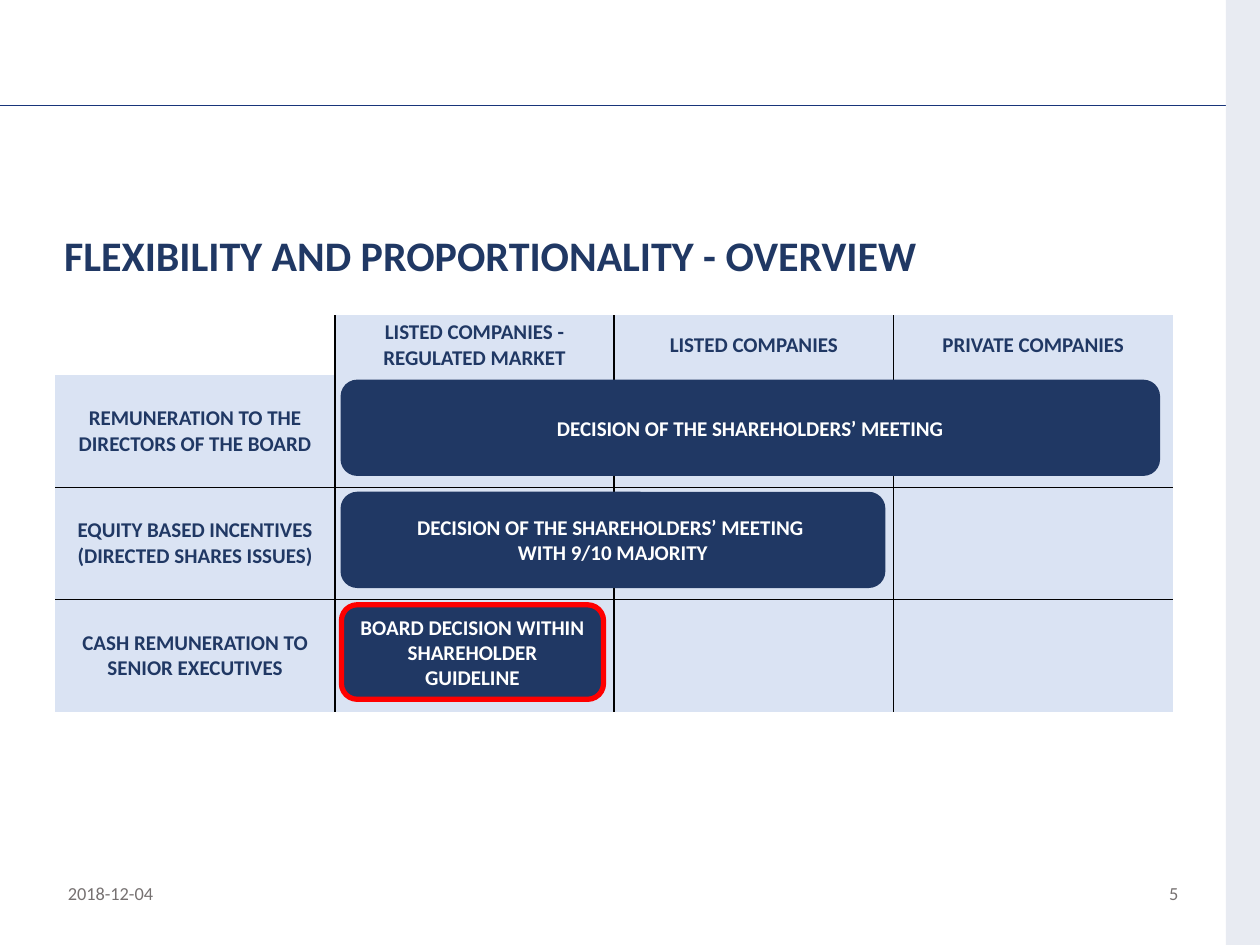
from lxml import etree
from pptx import Presentation
from pptx.dml.color import RGBColor
from pptx.enum.shapes import MSO_CONNECTOR, MSO_SHAPE
from pptx.enum.text import MSO_ANCHOR, PP_ALIGN
from pptx.oxml.ns import qn
from pptx.util import Inches, Pt

COLORS = {
    "navy": "203864",
    "rule": "18357A",
    "band": "E8EBF2",
    "cell": "DAE3F3",
    "white": "FFFFFF",
    "black": "000000",
    "red": "FF0000",
    "gray": "767171",
}
HEADERS = ["", "LISTED COMPANIES - REGULATED MARKET", "LISTED COMPANIES", "PRIVATE COMPANIES"]
TOPICS = [
    "REMUNERATION TO THE DIRECTORS OF THE BOARD",
    "EQUITY BASED INCENTIVES (DIRECTED SHARES ISSUES)",
    "CASH REMUNERATION TO SENIOR EXECUTIVES",
]
# Text, width and outline of the decision in each topic row
DECISIONS = [
    ("DECISION OF THE SHAREHOLDERS’ MEETING", 6.49, "navy", 1),
    ("DECISION OF THE SHAREHOLDERS’ MEETING \vWITH 9/10 MAJORITY", 4.31, "navy", 1),
    ("BOARD DECISION WITHIN SHAREHOLDER GUIDELINE", 2.08, "red", 3),
]
LEFT, TABLE_TOP, TABLE_WIDTH = 0.44, 2.5, 8.87
HEADER_HEIGHT, ROW_HEIGHT = 0.47, 0.89


def rgb(name):
    return RGBColor.from_string(COLORS[name])


class SlideBuilder:
    font = "Calibri"

    def __init__(self, slide):
        self.slide = slide

    def set_text(self, frame, text, size, color, bold=False, align=PP_ALIGN.LEFT):
        frame.text = text
        for paragraph in frame.paragraphs:
            paragraph.alignment = align
            for run in paragraph.runs:
                run.font.name = self.font
                run.font.size = Pt(size)
                run.font.bold = bold
                run.font.color.rgb = rgb(color)

    def set_insets(self, holder):
        holder.margin_left = holder.margin_right = Inches(0.07)
        holder.margin_top = holder.margin_bottom = Inches(0.04)

    def rule(self, y):
        line = self.slide.shapes.add_connector(
            MSO_CONNECTOR.STRAIGHT, 0, Inches(y), Inches(10), Inches(y))
        line.line.color.rgb = rgb("rule")
        line.line.width = Pt(0.75)
        etree.SubElement(line._element.spPr, qn("a:effectLst"))

    def shape(self, kind, left, top, width, height, fill, outline=None, weight=1):
        shape = self.slide.shapes.add_shape(
            kind, Inches(left), Inches(top), Inches(width), Inches(height))
        shape.shadow.inherit = False
        shape.fill.solid()
        shape.fill.fore_color.rgb = rgb(fill)
        if outline:
            shape.line.color.rgb = rgb(outline)
            shape.line.width = Pt(weight)
        else:
            shape.line.fill.background()
        return shape

    def decision(self, text, top, width, outline, weight):
        box = self.shape(MSO_SHAPE.ROUNDED_RECTANGLE, 2.71, top, width, 0.75,
                         "navy", outline, weight)
        box.text_frame.word_wrap = True
        box.text_frame.vertical_anchor = MSO_ANCHOR.MIDDLE
        self.set_text(box.text_frame, text, 12, "white", True, PP_ALIGN.CENTER)

    def text(self, text, left, top, width, height, size, color, bold=False):
        box = self.slide.shapes.add_textbox(
            Inches(left), Inches(top), Inches(width), Inches(height))
        box.text_frame.word_wrap = True
        self.set_text(box.text_frame, text, size, color, bold)
        return box.text_frame

    def title(self, text):
        frame = self.text(text, LEFT, 1.78, TABLE_WIDTH, 0.53, 24, "navy", True)
        self.set_insets(frame)
        frame.vertical_anchor = MSO_ANCHOR.MIDDLE
        frame.paragraphs[0].line_spacing = 0.9

    def borders(self, cell, visible):
        """Draw black borders on the visible sides and clear the others."""
        properties = cell._tc.get_or_add_tcPr()
        for side in "LRTB":
            line = etree.SubElement(properties, qn(f"a:ln{side}"), w=str(Pt(1)))
            if side in visible:
                fill = etree.SubElement(line, qn("a:solidFill"))
                etree.SubElement(fill, qn("a:srgbClr"), val=COLORS["black"])
            else:
                etree.SubElement(line, qn("a:noFill"))

    def table(self, rows):
        row_count, column_count = len(rows), len(rows[0])
        height = HEADER_HEIGHT + ROW_HEIGHT * (row_count - 1)
        table = self.slide.shapes.add_table(
            row_count, column_count, Inches(LEFT), Inches(TABLE_TOP),
            Inches(TABLE_WIDTH), Inches(height)).table
        for column in table.columns:
            column.width = Inches(TABLE_WIDTH / column_count)
        for r, texts in enumerate(rows):
            table.rows[r].height = Inches(ROW_HEIGHT if r else HEADER_HEIGHT)
            for c, text in enumerate(texts):
                cell = table.cell(r, c)
                inner = {"L": c > 0, "R": c < column_count - 1,
                         "T": r > 1, "B": 0 < r < row_count - 1}
                self.borders(cell, [side for side, shown in inner.items() if shown])
                cell.fill.solid()
                cell.fill.fore_color.rgb = rgb("cell" if r or c else "white")
                self.set_insets(cell)
                cell.vertical_anchor = MSO_ANCHOR.MIDDLE
                if text:
                    self.set_text(cell.text_frame, text, 12, "navy", True, PP_ALIGN.CENTER)


def main():
    deck = Presentation()
    deck.slide_width, deck.slide_height = Inches(10), Inches(7.5)
    builder = SlideBuilder(deck.slides.add_slide(deck.slide_layouts[6]))

    builder.rule(0.84)
    builder.shape(MSO_SHAPE.RECTANGLE, 9.73, 0, 0.27, 7.5, "band")
    builder.title("FLEXIBILITY AND PROPORTIONALITY - OVERVIEW")
    builder.text("5", 9.18, 6.95, 0.38, 0.4, 10.5, "gray")
    builder.text("2018-12-04", LEFT, 6.95, 2.25, 0.4, 10.5, "gray")

    builder.table([HEADERS] + [[topic, "", "", ""] for topic in TOPICS])
    for row, (text, width, outline, weight) in enumerate(DECISIONS):
        builder.decision(text, 3.02 + row * ROW_HEIGHT, width, outline, weight)

    deck.save("out.pptx")


if __name__ == "__main__":
    main()
